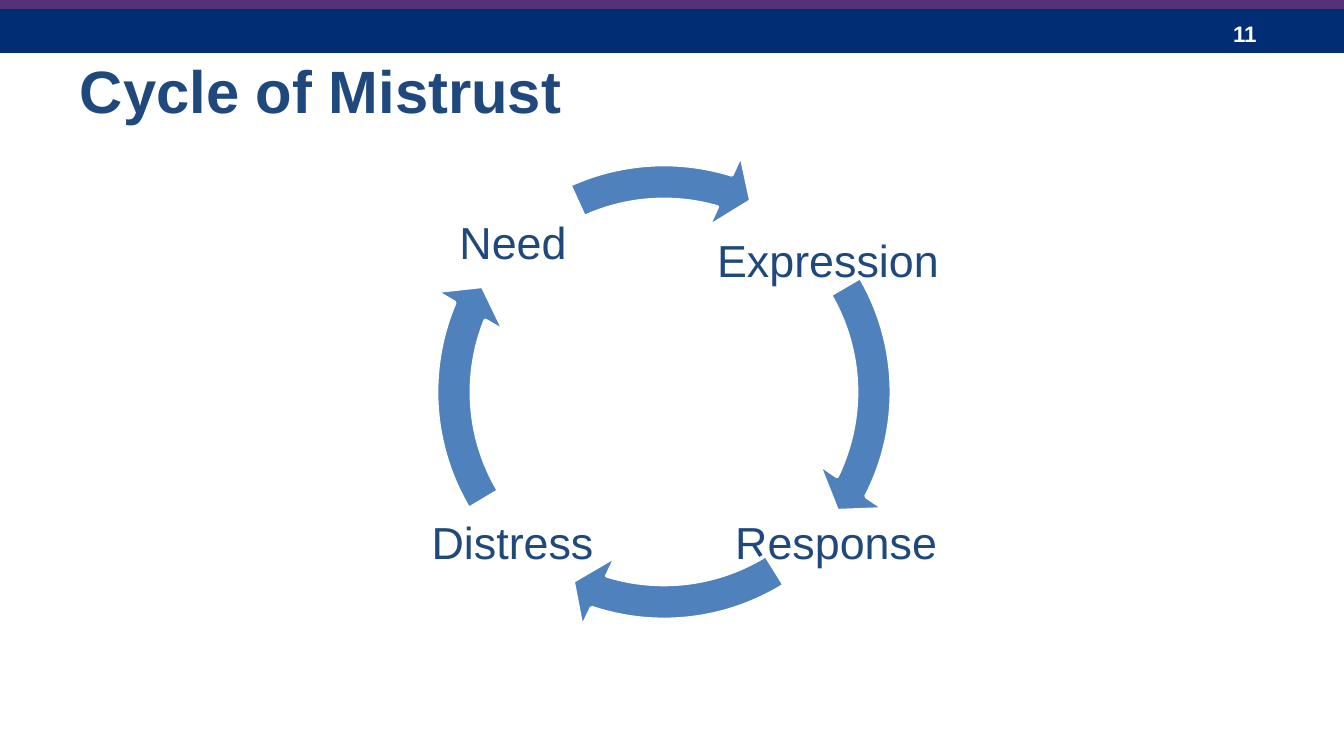
from pptx import Presentation
from pptx.dml.color import RGBColor
from pptx.enum.shapes import MSO_SHAPE
from pptx.enum.text import MSO_ANCHOR, PP_ALIGN
from pptx.util import Pt

RECT = MSO_SHAPE.RECTANGLE
CIRCULAR_ARROW = MSO_SHAPE.CIRCULAR_ARROW
TOP, MIDDLE = MSO_ANCHOR.TOP, MSO_ANCHOR.MIDDLE
LEFT, CENTER = PP_ALIGN.LEFT, PP_ALIGN.CENTER

EMU_PER_PX = 914400 / 134.4
WIDTH, HEIGHT = 1344, 756
WHITE, NAVY, PURPLE = "FFFFFF", "002D73", "553278"
INK, ARROW_BLUE = "1F497D", "4F81BD"

# Label, its box within the cycle, then start and end angle of the arrow after it.
STEPS = [
    ("Expression", (266, 75, 296, 86), 329.7, 26.71),
    ("Response", (268, 370, 308, 60), 58.04, 107.95),
    ("Distress", (-38, 359, 273, 82), 149.13, 202.53),
    ("Need", (11, 57, 176, 86), 245.51, 286.75),
]


def px(length):
    return round(length * EMU_PER_PX)


def color(hex_code):
    return RGBColor.from_string(hex_code)


def add_filled(slide, preset, box, fill):
    shape = slide.shapes.add_shape(preset, *map(px, box))
    shape.shadow.inherit = False
    shape.fill.solid()
    shape.fill.fore_color.rgb = color(fill)
    shape.line.fill.background()
    return shape


def add_text(slide, box, text, size, ink, bold=False, align=LEFT, anchor=TOP, inset=(13, 7)):
    frame = slide.shapes.add_textbox(*map(px, box)).text_frame
    frame.word_wrap = True
    frame.vertical_anchor = anchor
    frame.margin_left = frame.margin_right = px(inset[0])
    frame.margin_top = frame.margin_bottom = px(inset[1])
    paragraph = frame.paragraphs[0]
    paragraph.alignment = align
    run = paragraph.add_run()
    run.text = text
    run.font.name = "Arial"
    run.font.size = Pt(size)
    run.font.bold = bold
    run.font.color.rgb = color(ink)


def add_header(slide, left, top, width):
    add_filled(slide, RECT, (left, top + 9, width, 44), NAVY)
    add_text(slide, (left + 1220, top + 13, 101, 40), "11", 12, WHITE, bold=True)
    add_filled(slide, RECT, (left, top, width, 9), PURPLE)


def add_cycle_arrow(slide, box, start, end):
    """Draw a clockwise arc arrow; angles are degrees from the right."""
    arrow = add_filled(slide, CIRCULAR_ARROW, box, ARROW_BLUE)
    arrow.line.color.rgb = color(WHITE)
    arrow.line.width = Pt(2)
    head_angle = 7.74
    degree = 0.6  # one degree is 60000 units; adjustments count in 100000
    values = (0.07, head_angle * degree, end * degree, start * degree, 0.08)
    for index, value in enumerate(values):
        arrow.adjustments[index] = value


def add_cycle(slide, left, top, size):
    for label, (x, y, width, height), start, end in STEPS:
        add_text(slide, (left + x, top + y, width, height), label, 24, INK,
                 align=CENTER, anchor=MIDDLE, inset=(4, 4))
        add_cycle_arrow(slide, (left, top, size, size), start, end)


def main():
    deck = Presentation()
    deck.slide_width, deck.slide_height = px(WIDTH), px(HEIGHT)
    slide = deck.slides.add_slide(deck.slide_layouts[6])
    add_header(slide, 0, 0, WIDTH)
    add_text(slide, (67, 47, 1210, 120), "Cycle of Mistrust", 32, INK, bold=True)
    add_cycle(slide, 414, 142, 500)
    deck.save("out.pptx")


if __name__ == "__main__":
    main()
